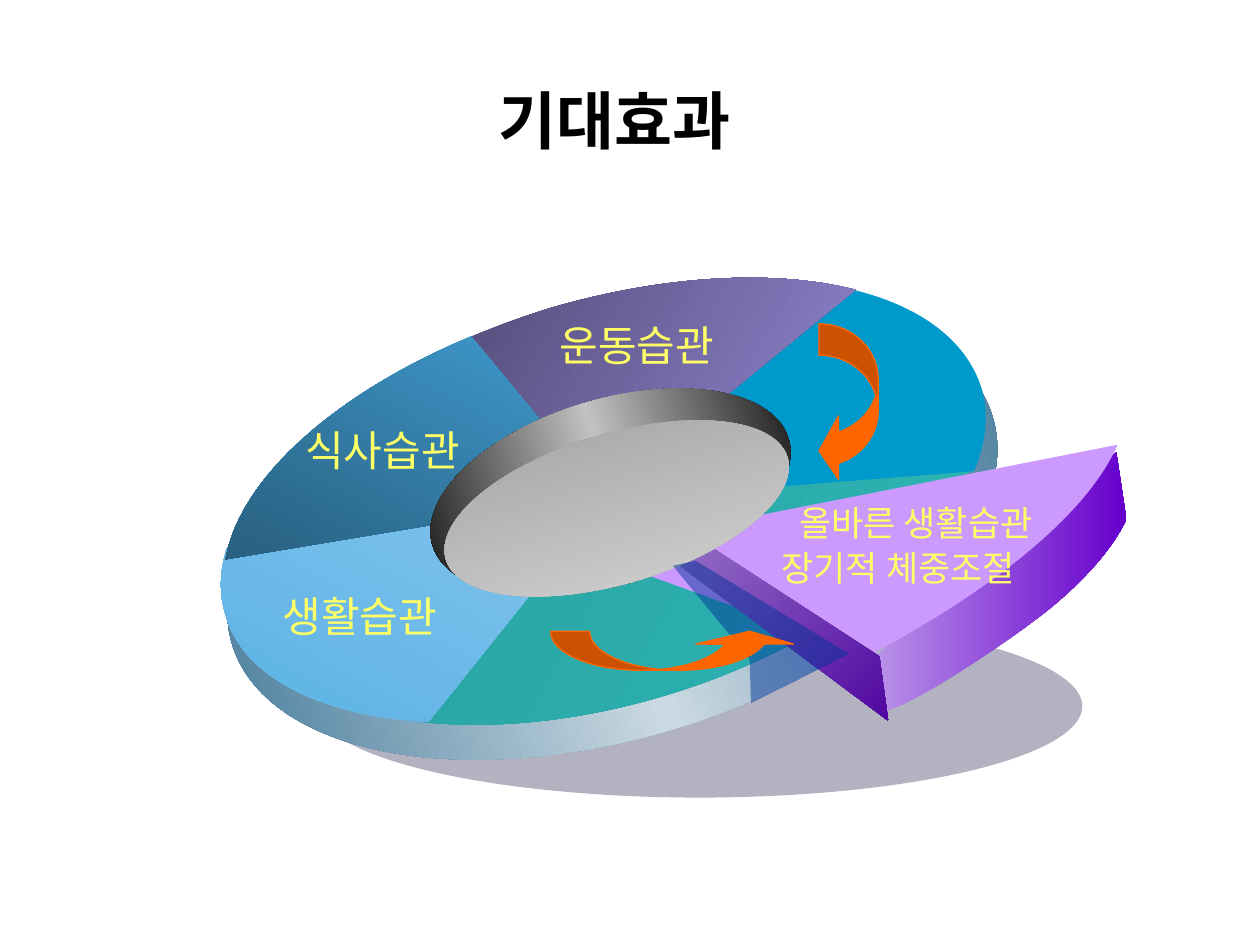
from dataclasses import dataclass
from math import cos, radians, sin

from lxml import etree
from pptx import Presentation
from pptx.dml.color import RGBColor
from pptx.enum.shapes import MSO_SHAPE
from pptx.enum.text import MSO_AUTO_SIZE, PP_ALIGN
from pptx.oxml.ns import qn
from pptx.util import Inches, Pt

OVAL = MSO_SHAPE.OVAL
UP_ARROW = MSO_SHAPE.CURVED_UP_ARROW
LEFT_ARROW = MSO_SHAPE.CURVED_LEFT_ARROW
CENTER = PP_ALIGN.CENTER
GROW = MSO_AUTO_SIZE.SHAPE_TO_FIT_TEXT
NO_FIT = MSO_AUTO_SIZE.NONE

Point = tuple[float, float]
Box = tuple[float, float, float, float]


@dataclass(frozen=True)
class Theme:
    title: str = "000000"
    label: str = "FFFF66"
    arrow: str = "FF6600"
    latin: str = "DejaVu Sans"
    korean: str = "Noto Sans CJK KR"
    title_size: int = 36
    label_size: int = 24
    result_size: int = 20
    tilt: float = 343.4
    wedge_tilt: float = 342.3


@dataclass(frozen=True)
class Paint:
    colors: tuple[str, ...]
    angle: int = 0
    alpha: int = 100


@dataclass(frozen=True)
class Disc:
    box: Box
    paint: Paint
    rotation: float = 0


@dataclass(frozen=True)
class Outline:
    box: Box
    start: Point
    curves: tuple[tuple[Point, Point, Point], ...]
    corners: tuple[Point, ...]
    paint: Paint
    rotation: float = 0


@dataclass(frozen=True)
class Label:
    text: str
    box: Box
    size: int
    font: str
    color: str
    bold: bool = False
    grow: bool = True


@dataclass(frozen=True)
class Arrow:
    kind: MSO_SHAPE
    box: Box
    adjustments: tuple[float, ...]


THEME = Theme()

BASE = [
    Disc((2.51, 4.88, 6.08, 1.45), Paint(("000134",), alpha=30)),
    Disc((1.71, 2.56, 6.3, 3.3), Paint(("356F92", "CBDAE2", "356F92")), THEME.tilt),
    Disc((1.77, 2.39, 6.08, 3.2), Paint(("279A9A", "2FB8B8"), 45), THEME.tilt),
]
SECTORS = [
    Outline((4.67, 2.47, 3.12, 1.68), (6.73, 2.29),
            (((7.3, 2.42), (7.67, 2.7), (7.79, 3.08)),
             ((7.85, 3.28), (7.83, 3.51), (7.73, 3.74))),
            ((4.8, 3.97),), Paint(("0099CC",)), THEME.tilt),
    Outline((1.83, 3.91, 3.15, 1.78), (1.8, 4.35),
            (((1.74, 4.54), (1.74, 4.72), (1.79, 4.88)),
             ((1.93, 5.37), (2.53, 5.68), (3.4, 5.73))),
            ((4.8, 3.98),), Paint(("8CC8EF", "56B0E3"), 135), THEME.tilt),
    Outline((3.84, 2.18, 3.08, 1.55), (3.7, 2.69),
            (((3.91, 2.6), (4.13, 2.52), (4.35, 2.45)),
             ((5.23, 2.19), (6.13, 2.13), (6.79, 2.3))),
            ((4.8, 3.93),), Paint(("524A76", "968CDA"), 45), THEME.tilt),
    Outline((1.61, 2.89, 3.02, 1.51), (3.74, 2.67),
            (((2.66, 3.12), (1.9, 3.8), (1.79, 4.44)),),
            ((4.79, 3.94),), Paint(("429FD5", "245672"), 135), THEME.tilt),
]
HOLE_RIM = Disc((3.37, 3.17, 2.95, 1.47), Paint(("000000", "C2C2C2", "000000")), THEME.tilt)
HOLE_FLOOR = Disc((3.48, 3.44, 2.83, 1.19), Paint(("9A9A9A", "DCDCDC"), 90), THEME.tilt)
WEDGE = [
    Outline((6.97, 3.59, 1.97, 2.05), (8.94, 4.12),
            (((8.84, 4.34), (8.6, 4.62), (8.28, 4.87)),
             ((7.96, 5.12), (7.25, 5.59), (7.03, 5.64)),
             ((6.99, 5.5), (6.97, 5.19), (6.97, 5.19))),
            ((8.86, 3.59),), Paint(("B890E8", "6600CC"))),
    Outline((4.73, 3.68, 4.32, 1.49), (8.87, 3.53),
            (((8.64, 4.06), (7.92, 4.66), (6.9, 5.2)),),
            ((4.6, 4.37),), Paint(("CC99FF",)), THEME.wedge_tilt),
    Outline((5.15, 4.02, 1.9, 1.7), (6.98, 5.21), (),
            ((7.05, 5.72), (5.26, 4.39), (5.15, 4.02)), Paint(("A080CC", "5007A1"), 45)),
]
WEDGE_SHADE = Outline((5.34, 4.45, 1.4, 1.12), (5.34, 4.49), (),
                      ((5.95, 5.23), (5.96, 5.58), (6.74, 5.19), (5.52, 4.45)),
                      Paint(("003399",), alpha=49))
EATING, EXERCISE, LIVING = [
    Label(text, (left, top, 1.53, 0.5), THEME.label_size, THEME.latin, THEME.label)
    for text, left, top in (("식사습관", 2.27, 3.32), ("운동습관", 4.29, 2.49), ("생활습관", 2.09, 4.64))
]
GOOD_HABITS, WEIGHT_CONTROL = [
    Label(text, (left, top, 2.24, 0.43), THEME.result_size, THEME.korean, THEME.label)
    for text, left, top in (("올바른 생활습관", 6.15, 3.93), ("장기적 체중조절", 6.01, 4.29))
]
ARROWS = [
    Arrow(UP_ARROW, (4.37, 5.01, 1.97, 0.31), (1.25, 2.51, 0.33)),
    Arrow(LEFT_ARROW, (6.5, 2.57, 0.47, 1.26), (0.53, 1.07, 0.33)),
]
TITLE = Label("기대효과", (2.95, 0.6, 3.86, 0.87), THEME.title_size, THEME.korean,
              THEME.title, bold=True, grow=False)
LAYERS = [*BASE, *SECTORS, HOLE_RIM, EATING, EXERCISE, *WEDGE, GOOD_HABITS, HOLE_FLOOR,
          WEDGE_SHADE, WEIGHT_CONTROL, LIVING, *ARROWS, TITLE]


def apply_paint(shape, paint: Paint) -> None:
    shape.shadow.inherit = False
    shape.line.fill.background()
    if len(paint.colors) == 1:
        shape.fill.solid()
        shape.fill.fore_color.rgb = RGBColor.from_string(paint.colors[0])
        if paint.alpha < 100:
            color = shape.fill._xPr.find(qn("a:solidFill"))[0]
            etree.SubElement(color, qn("a:alpha"), val=str(paint.alpha * 1000))
        return
    shape.fill.gradient()
    gradient = shape.fill._xPr.find(qn("a:gradFill"))
    for child in list(gradient):
        gradient.remove(child)
    stops = etree.SubElement(gradient, qn("a:gsLst"))
    for index, color in enumerate(paint.colors):
        position = index * 100000 // (len(paint.colors) - 1)
        stop = etree.SubElement(stops, qn("a:gs"), pos=str(position))
        etree.SubElement(stop, qn("a:srgbClr"), val=color)
    etree.SubElement(gradient, qn("a:lin"), ang=str(paint.angle * 60000), scaled="0")


def draw_disc(page, disc: Disc) -> None:
    shape = page.shapes.add_shape(OVAL, *map(Inches, disc.box))
    shape.rotation = disc.rotation
    apply_paint(shape, disc.paint)


def local_point(point: Point, outline: Outline) -> tuple[int, int]:
    left, top, width, height = outline.box
    angle = radians(-outline.rotation)
    x, y = point[0] - left - width / 2, point[1] - top - height / 2
    return (Inches(width / 2 + x * cos(angle) - y * sin(angle)),
            Inches(height / 2 + x * sin(angle) + y * cos(angle)))


def draw_outline(page, outline: Outline) -> None:
    anchors = [curve[-1] for curve in outline.curves] + list(outline.corners)
    builder = page.shapes.build_freeform(*local_point(outline.start, outline))
    builder.add_line_segments([local_point(point, outline) for point in anchors], close=True)
    shape = builder.convert_to_shape()
    shape.left, shape.top, shape.width, shape.height = map(Inches, outline.box)
    shape.rotation = outline.rotation

    contour = shape._element.spPr.find(".//" + qn("a:path"))
    contour.set("w", str(shape.width))
    contour.set("h", str(shape.height))
    for child in list(contour):
        contour.remove(child)
    steps = [("a:moveTo", (outline.start,))]
    steps += [("a:cubicBezTo", curve) for curve in outline.curves]
    steps += [("a:lnTo", (corner,)) for corner in outline.corners]
    for tag, points in steps:
        step = etree.SubElement(contour, qn(tag))
        for point in points:
            x, y = local_point(point, outline)
            etree.SubElement(step, qn("a:pt"), x=str(x), y=str(y))
    etree.SubElement(contour, qn("a:close"))
    apply_paint(shape, outline.paint)


def draw_label(page, label: Label) -> None:
    frame = page.shapes.add_textbox(*map(Inches, label.box)).text_frame
    frame.word_wrap = False
    frame.auto_size = GROW if label.grow else NO_FIT
    para = frame.paragraphs[0]
    para.text = label.text
    para.alignment = CENTER
    font = para.font
    font.size, font.bold, font.name = Pt(label.size), label.bold, label.font
    font.color.rgb = RGBColor.from_string(label.color)
    etree.SubElement(font._element, qn("a:ea"), typeface=label.font)


def draw_arrow(page, arrow: Arrow) -> None:
    shape = page.shapes.add_shape(arrow.kind, *map(Inches, arrow.box))
    for index, value in enumerate(arrow.adjustments):
        shape.adjustments[index] = value
    apply_paint(shape, Paint((THEME.arrow,)))
    shape.line.color.rgb = RGBColor.from_string(THEME.arrow)
    shape.line.width = Pt(0.75)


def main() -> None:
    deck = Presentation()
    deck.slide_width, deck.slide_height = Inches(10), Inches(7.5)
    page = deck.slides.add_slide(deck.slide_layouts[6])
    painters = {Disc: draw_disc, Outline: draw_outline, Label: draw_label, Arrow: draw_arrow}
    for layer in LAYERS:
        painters[type(layer)](page, layer)
    deck.save("out.pptx")


if __name__ == "__main__":
    main()
